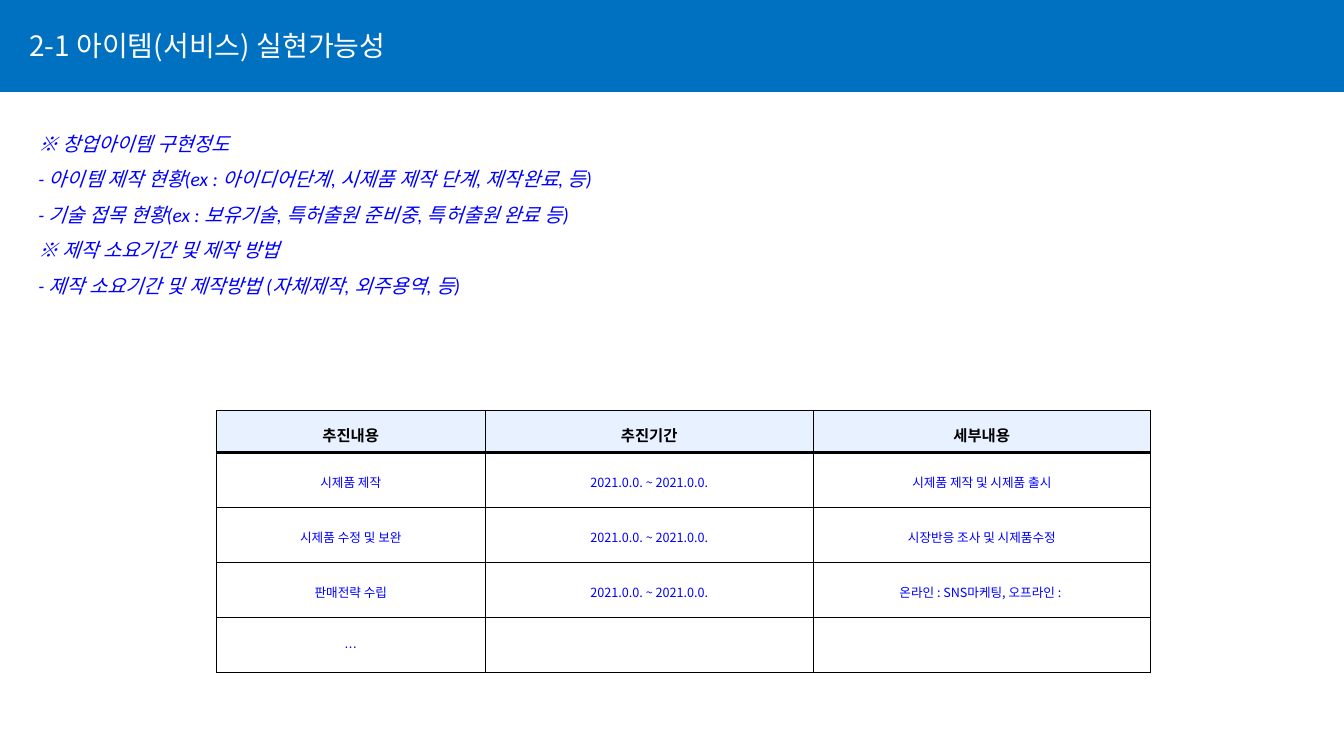
from dataclasses import dataclass

from lxml import etree
from pptx import Presentation
from pptx.dml.color import RGBColor
from pptx.enum import shapes, text
from pptx.oxml import ns
from pptx.util import Pt


@dataclass(frozen=True)
class Theme:
    band: RGBColor = RGBColor(0x00, 0x70, 0xC0)
    header: RGBColor = RGBColor(0xE8, 0xF1, 0xFF)
    guide: RGBColor = RGBColor(0x00, 0x00, 0xFF)
    white: RGBColor = RGBColor(0xFF, 0xFF, 0xFF)
    black: RGBColor = RGBColor(0x00, 0x00, 0x00)
    korean: str = "Noto Sans CJK KR"
    latin: str = "Calibri"
    title_size: float = 20
    body_size: float = 14
    header_size: float = 11
    cell_size: float = 9
    thin: float = 0.28
    thick: float = 2.55


@dataclass(frozen=True)
class GuideLine:
    wording: str
    mark: str = ""


THEME = Theme()
TITLE = "2-1 아이템(서비스) 실현가능성"
GUIDE_LINES = [
    GuideLine("창업아이템 구현정도", "※ "),
    GuideLine("- 아이템 제작 현황(ex : 아이디어단계, 시제품 제작 단계, 제작완료, 등)"),
    GuideLine("- 기술 접목 현황(ex : 보유기술, 특허출원 준비중, 특허출원 완료 등)"),
    GuideLine("제작 소요기간 및 제작 방법", "※ "),
    GuideLine("- 제작 소요기간 및 제작방법 (자체제작, 외주용역, 등)"),
]
PERIOD = "2021.0.0. ~ 2021.0.0."
PLAN = [
    ("추진내용", "추진기간", "세부내용"),
    ("시제품 제작", PERIOD, "시제품 제작 및 시제품 출시"),
    ("시제품 수정 및 보완", PERIOD, "시장반응 조사 및 시제품수정"),
    ("판매전략 수립", PERIOD, "온라인 : SNS마케팅, 오프라인 : "),
    ("…", "", ""),
]
COLUMN_WIDTHS = (192.5, 234, 241)
HEADER_HEIGHT, ROW_HEIGHT = 30, 39.3


def style_span(span, face: str, size: float, colour: RGBColor,
               bold: bool = False, italic: bool = False) -> None:
    """Format a run, with one face for both Latin and Korean letters."""
    font = span.font
    font.name, font.size = face, Pt(size)
    font.bold, font.italic = bold, italic
    font.color.rgb = colour
    etree.SubElement(span._r.get_or_add_rPr(), ns.qn("a:ea"), typeface=face)


def place(box, left: float, top: float, width: float, height: float) -> None:
    """Move a placeholder and set its text at the top, unscaled."""
    box.left, box.top, box.width, box.height = map(Pt, (left, top, width, height))
    frame = box.text_frame
    frame.word_wrap = True
    frame.auto_size = text.MSO_AUTO_SIZE.NONE
    frame.vertical_anchor = text.MSO_ANCHOR.TOP


def set_borders(cell, top: float, bottom: float) -> None:
    """Draw the four borders of a cell in black."""
    properties = cell._tc.get_or_add_tcPr()
    widths = {"lnL": THEME.thin, "lnR": THEME.thin, "lnT": top, "lnB": bottom}
    for side, width in widths.items():
        line = etree.SubElement(properties, ns.qn(f"a:{side}"), w=str(Pt(width)))
        fill = etree.SubElement(line, ns.qn("a:solidFill"))
        etree.SubElement(fill, ns.qn("a:srgbClr"), val=str(THEME.black))


def draw_band(page, width: int) -> None:
    band = page.shapes.add_shape(shapes.MSO_SHAPE.RECTANGLE, 0, 0, width, Pt(65.7))
    band.shadow.inherit = False
    band.fill.solid()
    band.fill.fore_color.rgb = THEME.band
    band.line.fill.background()
    page.shapes.element.insert(2, band.element)  # behind the title


def draw_title(page) -> None:
    box = page.shapes.title
    place(box, 13.7, 16.5, 281, 32)
    box.text_frame.text = TITLE
    para = box.text_frame.paragraphs[0]
    para.alignment = text.PP_ALIGN.LEFT
    para.line_spacing = Pt(24)
    style_span(para.runs[0], THEME.korean, THEME.title_size, THEME.white)


def draw_guide(page) -> None:
    box = page.placeholders[1]
    place(box, 20.2, 82, 786, 132)
    frame = box.text_frame
    for index, line in enumerate(GUIDE_LINES):
        para = frame.add_paragraph() if index else frame.paragraphs[0]
        para.line_spacing = Pt(25.3)
        para.space_before = Pt(0)
        properties = para._p.get_or_add_pPr()
        properties.set("marL", "0")
        properties.set("indent", "0")
        etree.SubElement(properties, ns.qn("a:buNone"))
        for wording, face in ((line.mark, THEME.korean), (line.wording, THEME.latin)):
            if wording:
                span = para.add_run()
                span.text = wording
                style_span(span, face, THEME.body_size, THEME.guide, italic=True)


def fill_cell(cell, wording: str, row: int) -> None:
    is_header = row == 0
    set_borders(cell, THEME.thick if row == 1 else THEME.thin,
                THEME.thick if is_header else THEME.thin)
    if is_header:
        cell.fill.solid()
        cell.fill.fore_color.rgb = THEME.header
    else:
        cell.fill.background()
    cell.vertical_anchor = text.MSO_ANCHOR.MIDDLE
    cell.margin_left = cell.margin_right = Pt(1.4)
    cell.margin_top = cell.margin_bottom = Pt(1.4)
    if not wording:
        return
    cell.text_frame.text = wording
    para = cell.text_frame.paragraphs[0]
    para.alignment = text.PP_ALIGN.CENTER
    para.line_spacing = 1.3
    size = THEME.header_size if is_header else THEME.cell_size
    colour = THEME.black if is_header else THEME.guide
    style_span(para.runs[0], THEME.korean, size, colour, bold=is_header)


def draw_plan(page) -> None:
    height = HEADER_HEIGHT + ROW_HEIGHT * (len(PLAN) - 1)
    table = page.shapes.add_table(len(PLAN), len(COLUMN_WIDTHS), Pt(154.3), Pt(293),
                                  Pt(sum(COLUMN_WIDTHS)), Pt(height)).table
    table.first_row = table.horz_banding = False
    for column, width in zip(table.columns, COLUMN_WIDTHS):
        column.width = Pt(width)
    for row, wordings in enumerate(PLAN):
        table.rows[row].height = Pt(ROW_HEIGHT if row else HEADER_HEIGHT)
        for column, wording in enumerate(wordings):
            fill_cell(table.cell(row, column), wording, row)


def main() -> None:
    deck = Presentation()
    deck.slide_width, deck.slide_height = Pt(960), Pt(540)
    page = deck.slides.add_slide(deck.slide_layouts[1])

    # Heading
    draw_band(page, deck.slide_width)
    draw_title(page)

    # Guidance and schedule
    draw_guide(page)
    draw_plan(page)
    deck.save("out.pptx")


if __name__ == "__main__":
    main()
